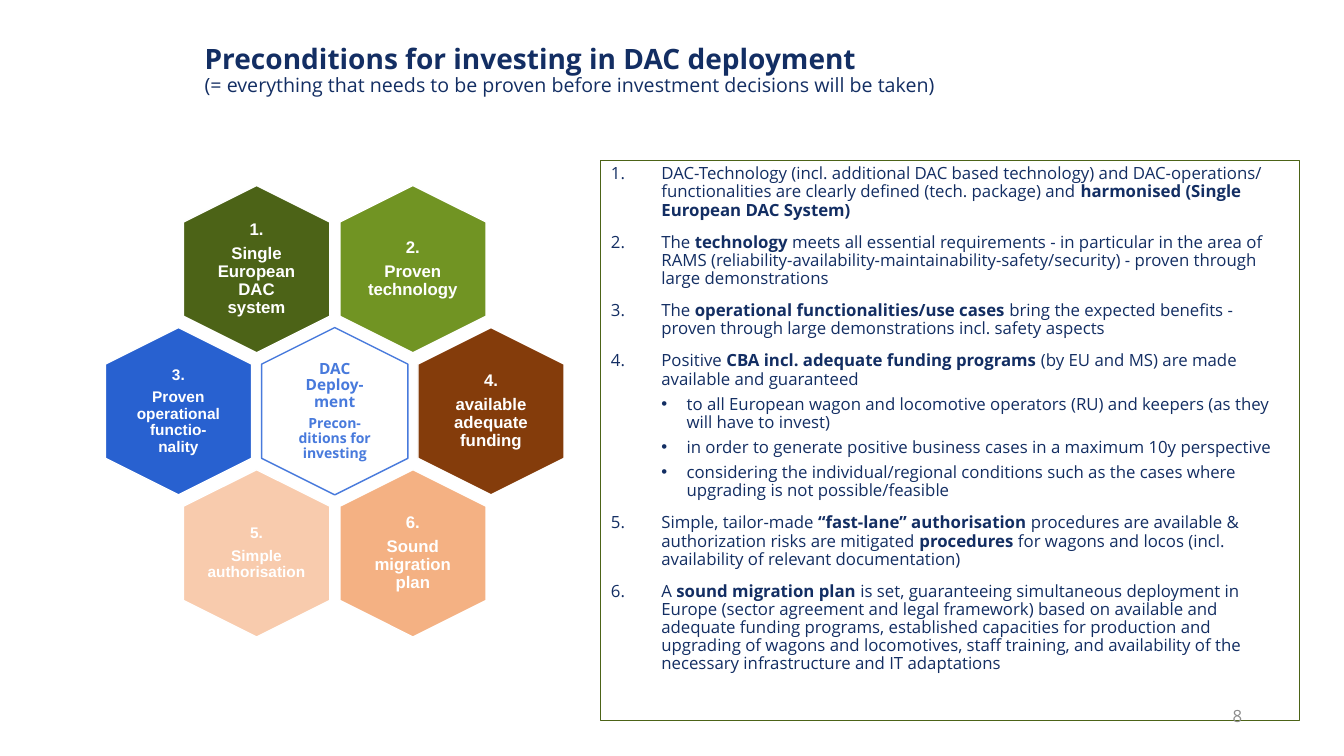
from lxml import etree
from pptx import Presentation
from pptx.dml.color import RGBColor
from pptx.enum.shapes import MSO_SHAPE as Shape
from pptx.enum.text import MSO_ANCHOR as Anchor, MSO_AUTO_SIZE as AutoSize, PP_ALIGN as Align
from pptx.oxml.ns import qn
from pptx.util import Inches, Pt

NAVY = RGBColor(0x13, 0x2E, 0x63)
DARK_GREEN = RGBColor(0x4C, 0x63, 0x17)
GREEN = RGBColor(0x71, 0x94, 0x23)
BLUE = RGBColor(0x28, 0x61, 0xD0)
LIGHT_BLUE = RGBColor(0x48, 0x7A, 0xDC)
BROWN = RGBColor(0x84, 0x3C, 0x0B)
ORANGE = RGBColor(0xF4, 0xB1, 0x83)
PEACH = RGBColor(0xF8, 0xCB, 0xAD)
WHITE = RGBColor(0xFF, 0xFF, 0xFF)
GREY = RGBColor(0x8C, 0x8C, 0x8C)

# (level, text); ** encloses bold words
CONDITIONS = [
    (0, "DAC-Technology (incl. additional DAC based technology) and DAC-operations/ functionalities "
        "are clearly defined (tech. package) and **harmonised (Single European DAC System)**"),
    (0, "The **technology** meets all essential requirements - in particular in the area of RAMS "
        "(reliability-availability-maintainability-safety/security) - proven through large demonstrations"),
    (0, "The **operational functionalities/use cases **bring the expected benefits - proven through "
        "large demonstrations incl. safety aspects"),
    (0, "Positive **CBA incl. adequate funding programs** (by EU and MS) are made available and guaranteed"),
    (1, "to all European wagon and locomotive operators (RU) and keepers (as they will have to invest)"),
    (1, "in order to generate positive business cases in a maximum 10y perspective"),
    (1, "considering the individual/regional conditions such as the cases where upgrading is not "
        "possible/feasible"),
    (0, "Simple, tailor-made **“fast-lane” authorisation** procedures are available & authorization "
        "risks are mitigated **procedures **for wagons and locos (incl. availability of relevant documentation)"),
    (0, "A **sound migration plan **is set, guaranteeing simultaneous deployment in Europe (sector "
        "agreement and legal framework) based on available and adequate funding programs, established "
        "capacities for production and upgrading of wagons and locomotives, staff training, and "
        "availability of the necessary infrastructure and IT adaptations"),
]

# (column, row) from the centre, fill, text inset, size, heading, label
OUTER_CELLS = [
    (0.5, -1, GREEN, 0.05, 12, "2.", "Proven technology"),
    (-0.5, -1, DARK_GREEN, 0, 12, "1.", "Single European\vDAC\vsystem"),
    (-1, 0, BLUE, 0.05, 11, "3.", "Proven operational functio-\vnality"),
    (1, 0, BROWN, 0, 12, "4.", "available adequate funding"),
    (0.5, 1, ORANGE, 0.05, 12, "6.", "Sound migration plan"),
    (-0.5, 1, PEACH, 0, 11, "5.", "Simple authorisation"),
]


def set_font(font, name, size, color, bold=None):
    font.name, font.size, font.bold = name, Pt(size), bold
    font.color.rgb = color


def place(shape, left, top, width, height):
    shape.left, shape.top = Inches(left), Inches(top)
    shape.width, shape.height = Inches(width), Inches(height)


def fill_title(title, left, top, width, height):
    place(title, left, top, width, height)
    frame = title.text_frame
    frame.auto_size, frame.vertical_anchor = AutoSize.NONE, Anchor.MIDDLE
    heading = frame.paragraphs[0]
    heading.alignment, heading.line_spacing = Align.LEFT, 0.9
    main = heading.add_run()
    main.text = "Preconditions for investing in DAC deployment"
    set_font(main.font, "Open Sans", 20, NAVY, True)
    heading.add_line_break()
    subtitle = heading.add_run()
    subtitle.text = "(= everything that needs to be proven before investment decisions will be taken)"
    set_font(subtitle.font, "Open Sans", 14, NAVY, False)


def set_marker(paragraph, level):
    """Number the top level, put a dot before the second, with hanging indents."""
    properties = paragraph._p.get_or_add_pPr()
    margin, hanging = ((0.5, 0.5), (0.75, 0.25))[level]
    properties.set("marL", str(Inches(margin)))
    properties.set("indent", str(-Inches(hanging)))
    etree.SubElement(properties, qn("a:buFont"), typeface="Arial" if level else "+mj-lt")
    if level:
        etree.SubElement(properties, qn("a:buChar"), char="•")
    else:
        etree.SubElement(properties, qn("a:buAutoNum"), type="arabicPeriod")


def fill_conditions(body, left, top, width, height):
    place(body, left, top, width, height)
    body.line.color.rgb = DARK_GREEN
    body.line.width = Pt(0.75)
    frame = body.text_frame
    frame.auto_size, frame.vertical_anchor = AutoSize.NONE, Anchor.TOP
    for index, (level, text) in enumerate(CONDITIONS):
        condition = frame.add_paragraph() if index else frame.paragraphs[0]
        condition.level = level
        set_marker(condition, level)
        condition.line_spacing = 0.9
        condition.space_before = Pt((10, 5)[level] if index else 0)
        set_font(condition.font, "Open Sans", 12, NAVY)
        for part, words in enumerate(text.split("**")):
            if words:
                run = condition.add_run()
                run.text = words
                if part % 2:
                    run.font.bold = True


def add_cell(shapes, center_x, center_y, fill, outline, inset, lines):
    """Draw an upright hexagon with its text; lines holds (text, font, size, colour)."""
    length, breadth = 1.66, 1.45
    hexagon = shapes.add_shape(Shape.HEXAGON, Inches(center_x - length / 2), Inches(center_y - breadth / 2),
                               Inches(length), Inches(breadth))
    hexagon.rotation = 90
    hexagon.adjustments[0] = 0.25
    hexagon.shadow.inherit = False
    if fill is None:
        hexagon.fill.background()
    else:
        hexagon.fill.solid()
        hexagon.fill.fore_color.rgb = fill
    hexagon.line.color.rgb = outline
    hexagon.line.width = Pt(1)

    label = shapes.add_textbox(Inches(center_x - 0.5), Inches(center_y - 0.57), Inches(1), Inches(1.14))
    frame = label.text_frame
    frame.word_wrap, frame.vertical_anchor = True, Anchor.MIDDLE
    frame.margin_left = frame.margin_right = frame.margin_top = frame.margin_bottom = Inches(inset)
    for index, (text, font, size, color) in enumerate(lines):
        line = frame.add_paragraph() if index else frame.paragraphs[0]
        line.text = text
        line.alignment, line.line_spacing = Align.CENTER, 0.9
        line.space_after = Pt(0 if index else 4)
        set_font(line.font, font, size, color, True)


def add_honeycomb(slide, center_x, center_y, column_pitch, row_pitch):
    cells = slide.shapes.add_group_shape().shapes
    for column, row, fill, inset, size, number, label in OUTER_CELLS:
        lines = [(text, "Arial", size, WHITE) for text in (number, label)]
        add_cell(cells, center_x + column * column_pitch, center_y + row * row_pitch,
                 fill, WHITE, inset, lines)
    add_cell(cells, center_x, center_y, None, LIGHT_BLUE, 0.05,
             [("DAC Deploy-ment", "Open Sans", 11, LIGHT_BLUE),
              ("Precon-\vditions for investing", "Open Sans", 10, LIGHT_BLUE)])


def add_page_number(slide, left, top, width, height):
    box = slide.shapes.add_textbox(Inches(left), Inches(top), Inches(width), Inches(height))
    box.text_frame.word_wrap = True
    number = box.text_frame.paragraphs[0]
    number.text = "8"
    number.alignment = Align.RIGHT
    set_font(number.font, "Open Sans", 12, GREY)


def main():
    deck = Presentation()
    deck.slide_width, deck.slide_height = Inches(13.33), Inches(7.5)
    slide = deck.slides.add_slide(deck.slide_layouts[1])
    fill_title(slide.shapes.title, 1.93, 0.23, 11.4, 0.95)
    fill_conditions(slide.placeholders[1], 5.96, 1.59, 6.93, 5.56)
    add_honeycomb(slide, 3.32, 4.08, 1.55, 1.41)
    add_page_number(slide, 9.42, 6.95, 3, 0.4)
    deck.save("out.pptx")


if __name__ == "__main__":
    main()
